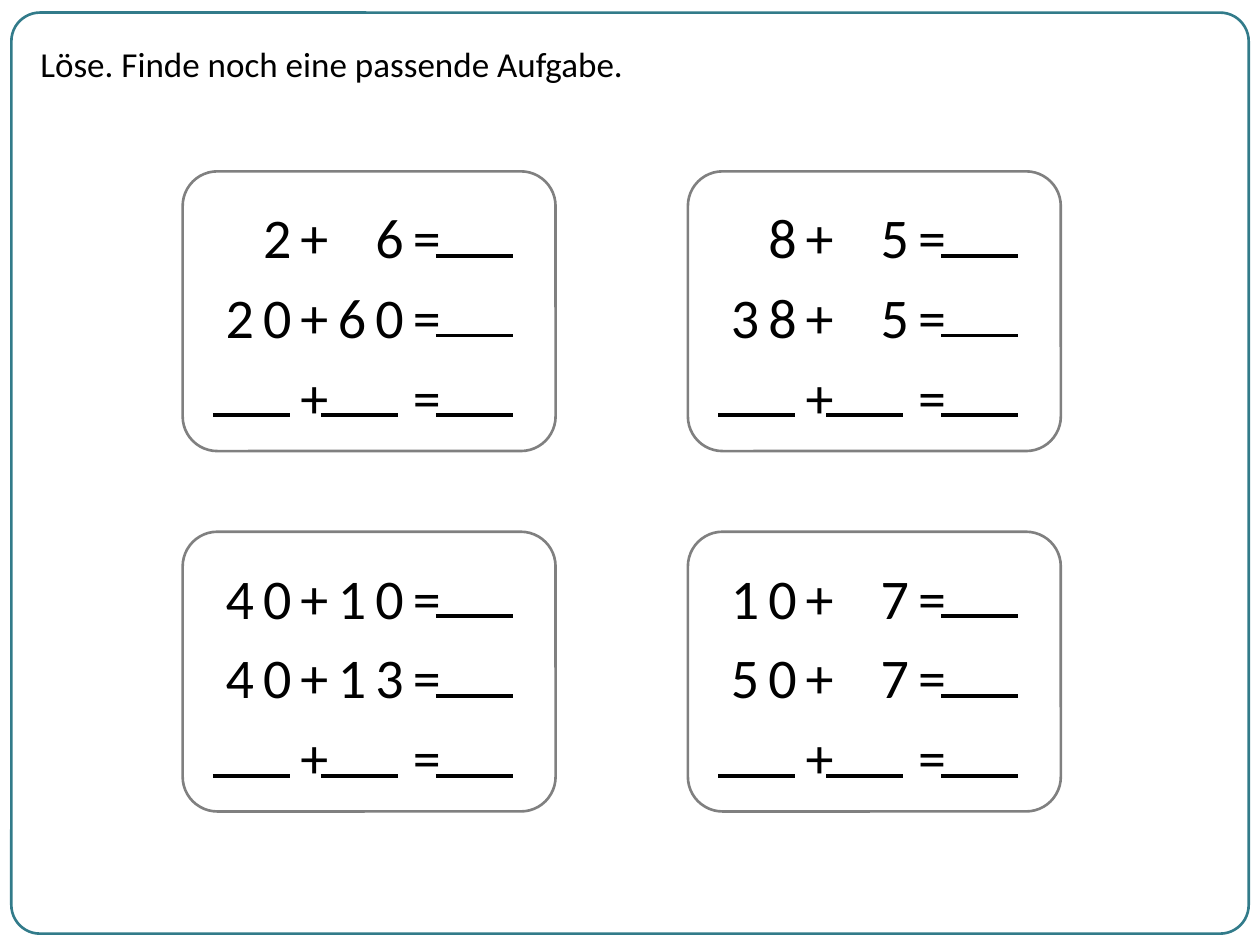
from dataclasses import dataclass
from itertools import product

from pptx import Presentation
from pptx.dml.color import RGBColor
from pptx.enum.shapes import MSO_CONNECTOR as Connector, MSO_SHAPE as Shape
from pptx.enum.text import MSO_ANCHOR as Anchor, MSO_AUTO_SIZE as AutoSize, PP_ALIGN as Align
from pptx.oxml.ns import qn
from pptx.util import Inches, Pt

TEAL = RGBColor(0x32, 0x7B, 0x8A)
GRAY = RGBColor(0x80, 0x80, 0x80)
BLACK = RGBColor(0, 0, 0)
FONT = "Calibri"
NO_STYLE_NO_GRID = "{2D5ABB26-0587-4C30-8999-92F81FD0307C}"

# Exercise grid, in inches
COLUMNS, ROWS = 8, 3
TABLE_WIDTH, TABLE_HEIGHT = 2.38, 1.9
COLUMN, ROW = TABLE_WIDTH / COLUMNS, TABLE_HEIGHT / ROWS
FIRST_LEFT, FIRST_TOP = 1.69, 1.58
PITCH_X, PITCH_Y = 4.01, 2.86

# Blanks to write on, in columns and rows of the exercise grid
BLANK_LENGTH = 2.05
FIRST_NUMBER, SECOND_NUMBER, RESULT = 0, 2.88, 5.95
BASELINE = 0.71


@dataclass(frozen=True)
class Exercise:
    column: int
    row: int
    sums: tuple[tuple[int, int], ...]

    @property
    def left(self) -> float:
        return FIRST_LEFT + self.column * PITCH_X

    @property
    def top(self) -> float:
        return FIRST_TOP + self.row * PITCH_Y


EXERCISES = (
    Exercise(0, 0, ((2, 6), (20, 60))),
    Exercise(1, 0, ((8, 5), (38, 5))),
    Exercise(0, 1, ((40, 10), (40, 13))),
    Exercise(1, 1, ((10, 7), (50, 7))),
)


def add_outline(slide, left: float, top: float, width: float, height: float,
                corner: float, color: RGBColor) -> None:
    shape = slide.shapes.add_shape(Shape.ROUNDED_RECTANGLE, Inches(left), Inches(top),
                                   Inches(width), Inches(height))
    shape.adjustments[0] = corner
    shape.shadow.inherit = False
    shape.fill.background()
    shape.line.color.rgb = color
    shape.line.width = Pt(1.5)


def add_sums(slide, exercise: Exercise) -> None:
    frame = slide.shapes.add_table(ROWS, COLUMNS, Inches(exercise.left), Inches(exercise.top),
                                   Inches(TABLE_WIDTH), Inches(TABLE_HEIGHT))
    table = frame.table
    table.first_row = table.horz_banding = False
    table._tbl.tblPr.find(qn("a:tableStyleId")).text = NO_STYLE_NO_GRID
    # One character per cell; the last row has only the signs
    lines = [f"{first:>2}+{second:>2}=" for first, second in exercise.sums] + ["  +  ="]
    for row, column in product(range(ROWS), range(COLUMNS)):
        cell = table.cell(row, column)
        cell.fill.background()
        cell.vertical_anchor = Anchor.MIDDLE
        paragraph = cell.text_frame.paragraphs[0]
        paragraph.alignment = Align.CENTER
        paragraph.font.name = FONT
        paragraph.font.size = Pt(32)
        paragraph.font.color.rgb = BLACK
        paragraph.text = lines[row][column:column + 1].strip()


def add_blank(slide, exercise: Exercise, column: float, row: int) -> None:
    left = exercise.left + column * COLUMN
    y = Inches(exercise.top + (row + BASELINE) * ROW)
    line = slide.shapes.add_connector(Connector.STRAIGHT, Inches(left), y,
                                      Inches(left + BLANK_LENGTH * COLUMN), y)
    line.line.color.rgb = BLACK
    line.line.width = Pt(2.25)
    properties = line._element.spPr
    properties.append(properties.makeelement(qn("a:effectLst"), {}))


def add_exercise(slide, exercise: Exercise) -> None:
    add_sums(slide, exercise)
    add_outline(slide, exercise.left - 0.24, exercise.top - 0.22, 2.96, 2.22, 0.124, GRAY)
    last = ROWS - 1
    for column in (FIRST_NUMBER, SECOND_NUMBER):
        add_blank(slide, exercise, column, last)
    for row in range(ROWS):
        add_blank(slide, exercise, RESULT, row)


def add_task(slide, text: str) -> None:
    title = slide.shapes.title
    title.left, title.top = Inches(0.22), Inches(0.29)
    title.width, title.height = Inches(6.72), Inches(0.44)
    text_frame = title.text_frame
    text_frame.text = text
    text_frame.word_wrap = True
    text_frame.auto_size = AutoSize.SHAPE_TO_FIT_TEXT
    text_frame.vertical_anchor = Anchor.TOP
    paragraph = text_frame.paragraphs[0]
    paragraph.alignment = Align.LEFT
    paragraph.font.name = FONT
    paragraph.font.size = Pt(20)
    paragraph.font.color.rgb = BLACK


def main() -> None:
    presentation = Presentation()
    presentation.slide_width, presentation.slide_height = Inches(10), Inches(7.5)
    slide = presentation.slides.add_slide(presentation.slide_layouts.get_by_name("Title Only"))

    # Task and page frame
    add_task(slide, "Löse. Finde noch eine passende Aufgabe.")
    add_outline(slide, 0.09, 0.1, 9.82, 7.31, 0.031, TEAL)

    # Four exercise cards
    for exercise in EXERCISES:
        add_exercise(slide, exercise)

    presentation.save("out.pptx")


if __name__ == "__main__":
    main()
